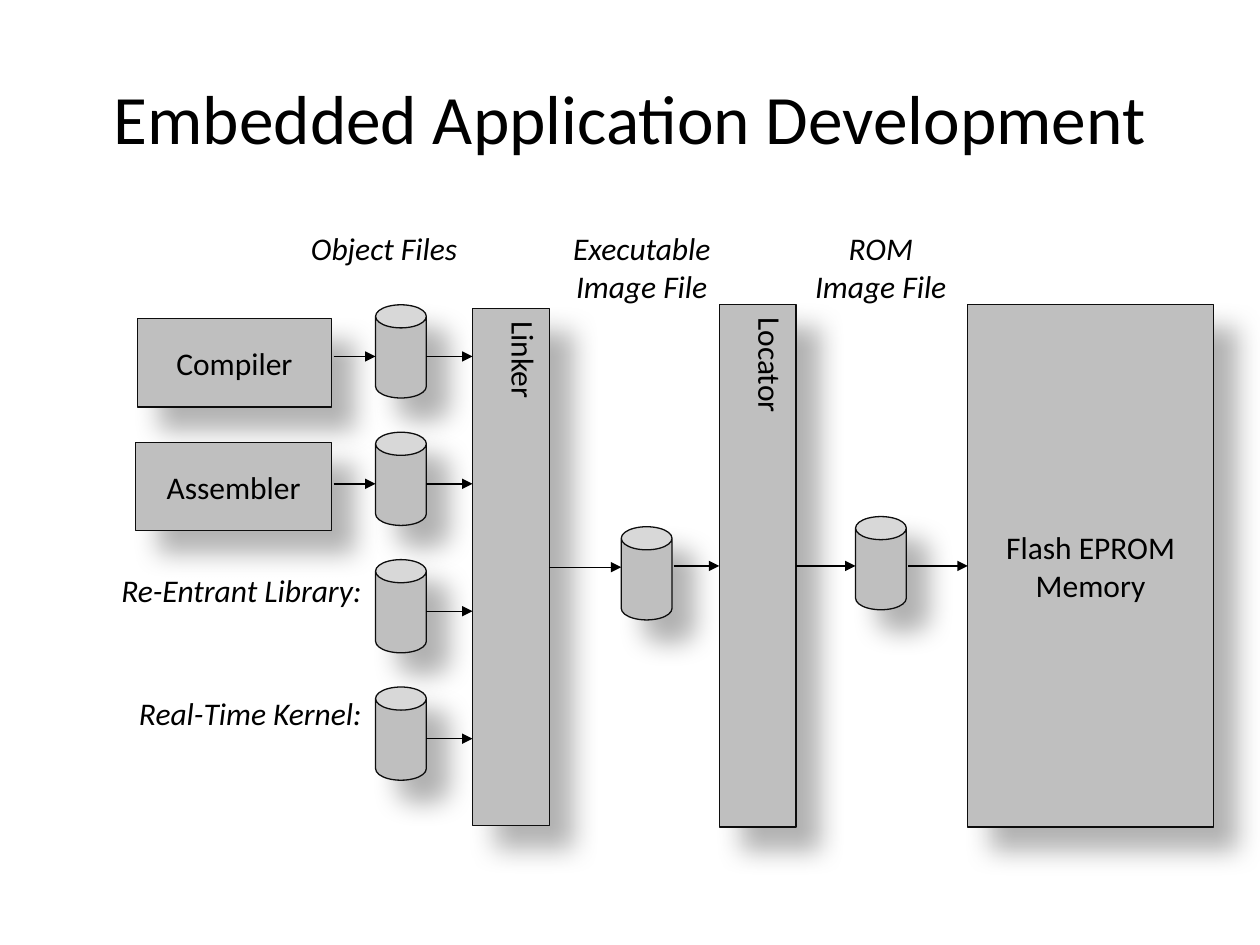
from collections import namedtuple

from lxml import etree
from pptx import Presentation
from pptx.dml.color import RGBColor
from pptx.enum.shapes import MSO_CONNECTOR, MSO_SHAPE
from pptx.enum.text import MSO_ANCHOR, MSO_AUTO_SIZE, PP_ALIGN
from pptx.oxml import parse_xml
from pptx.oxml.ns import nsdecls, qn
from pptx.util import Pt

BLACK = RGBColor(0x00, 0x00, 0x00)
OUTLINE = RGBColor(0x0D, 0x0D, 0x0D)
GREY = RGBColor(0xBF, 0xBF, 0xBF)
FONT = "Calibri"
TEXT_SIZE = 18
TOP_SIDE, LEFT_SIDE, BOTTOM_SIDE, RIGHT_SIDE = range(4)
CAN_WIDTH, CAN_HEIGHT = 29, 53.3

Box = namedtuple("Box", "left top width height")

SHADOW = (
    f'<a:outerShdw {nsdecls("a")} blurRad="{Pt(15)}" dist="{Pt(18)}" '
    'dir="2700000" algn="tl" rotWithShape="0">'
    '<a:srgbClr val="000000"><a:alpha val="30000"/></a:srgbClr></a:outerShdw>'
)


def in_points(box):
    return [Pt(length) for length in box]


def write(frame, text, align, size=TEXT_SIZE, italic=False):
    frame.word_wrap = True
    frame.auto_size = MSO_AUTO_SIZE.NONE
    frame.text = text
    for para in frame.paragraphs:
        para.alignment = align
        para.font.name = FONT
        para.font.size = Pt(size)
        para.font.italic = italic
        para.font.color.rgb = BLACK


def add_grey_shape(page, kind, box):
    shape = page.shapes.add_shape(kind, *in_points(box))
    shape.fill.solid()
    shape.fill.fore_color.rgb = GREY
    shape.line.color.rgb = OUTLINE
    shape.line.width = Pt(0.75)
    shape.shadow.inherit = False
    shape.element.spPr.find(qn("a:effectLst")).append(parse_xml(SHADOW))
    return shape


def add_block(page, text, box):
    block = add_grey_shape(page, MSO_SHAPE.RECTANGLE, box)
    write(block.text_frame, text, PP_ALIGN.CENTER)
    block.text_frame.vertical_anchor = MSO_ANCHOR.MIDDLE
    return block


def add_tall_stage(page, text, box):
    """Add a narrow block whose label reads downwards from its top."""
    stage = add_grey_shape(page, MSO_SHAPE.RECTANGLE, box)
    write(stage.text_frame, text, PP_ALIGN.LEFT)
    stage.text_frame.vertical_anchor = MSO_ANCHOR.TOP
    stage.text_frame._txBody.bodyPr.set("vert", "eaVert")
    return stage


def add_file(page, left, top):
    can = add_grey_shape(page, MSO_SHAPE.CAN, Box(left, top, CAN_WIDTH, CAN_HEIGHT))
    can.adjustments[0] = 0.456


def add_label(page, text, box, align):
    label = page.shapes.add_textbox(*in_points(box))
    write(label.text_frame, text, align, italic=True)


def add_arrow(page, start, end, y, source=None, target=None):
    """Point right along y, joined to the source and target blocks if given."""
    arrow = page.shapes.add_connector(
        MSO_CONNECTOR.STRAIGHT, Pt(start), Pt(y), Pt(end), Pt(y))
    if source is not None:
        arrow.begin_connect(source, RIGHT_SIDE)
    if target is not None:
        arrow.end_connect(target, LEFT_SIDE)
    arrow.line.color.rgb = BLACK
    arrow.line.width = Pt(0.75)
    properties = arrow.element.spPr
    etree.SubElement(properties.find(qn("a:ln")), qn("a:tailEnd"), type="triangle")
    etree.SubElement(properties, qn("a:effectLst"))


def add_title(page, box):
    title = page.shapes.title
    title.left, title.top, title.width, title.height = in_points(box)
    write(title.text_frame, "Embedded Application Development",
          PP_ALIGN.CENTER, size=39.6)
    title.text_frame.vertical_anchor = MSO_ANCHOR.MIDDLE


def add_object_files(page, box):
    """Add the sources and their object files; arrows end at the box's right."""
    right = box.left + box.width
    can_left = right - 55.4
    row_step = 72.8
    add_label(page, "Object Files",
              Box(right - 99.4, box.top - 46.8, 110, 43), PP_ALIGN.LEFT)
    add_block(page, "Compiler", Box(78.5, box.top + 8, 111, 50.4))
    add_block(page, "Assembler", Box(77.5, box.top + 78.7, 112, 50.4))
    for row, text in enumerate(("Re-Entrant Library:", "Real-Time Kernel:")):
        add_label(page, text,
                  Box(box.left, box.top + 148.4 + 70.6 * row, 190, 51),
                  PP_ALIGN.RIGHT)
    for row in range(4):
        top = box.top + row * row_step
        middle = top + 29.5
        add_file(page, can_left, top)
        add_arrow(page, can_left + CAN_WIDTH, right, middle)
        if row < 2:
            add_arrow(page, can_left - 24, can_left, middle)


def add_image_file(page, caption, caption_box, can_left, can_top, source, target):
    """Add a captioned file between two stages, with an arrow on each side."""
    add_label(page, caption, caption_box, PP_ALIGN.CENTER)
    add_file(page, can_left, can_top)
    source_middle, target_middle = (
        (stage.top + stage.height / 2) / Pt(1) for stage in (source, target))
    add_arrow(page, 0, can_left, source_middle, source=source)
    add_arrow(page, can_left + CAN_WIDTH + 1, 0, target_middle, target=target)


def add_pipeline(page, box):
    """Add the linker, the locator and the memory, and the files between."""
    linker = add_tall_stage(
        page, "Linker", Box(box.left, box.top + 2.2, 44, box.height - 3))
    locator = add_tall_stage(
        page, "Locator", Box(box.left + 141, box.top, 44, box.height))
    memory = add_block(
        page, "Flash EPROM Memory",
        Box(box.left + 283, box.top, box.width - 283, box.height))
    caption_top = box.top - 46.8
    add_image_file(page, "Executable Image File",
                   Box(box.left + 36.7, caption_top, 120, 70.6),
                   box.left + 85, box.top + 126.8, linker, locator)
    add_image_file(page, "ROM\vImage File",
                   Box(box.left + 183.6, caption_top, 99.4, 75.6),
                   box.left + 218.9, box.top + 121, locator, memory)


def main():
    deck = Presentation()
    deck.slide_width, deck.slide_height = Pt(720), Pt(540)
    page = deck.slides.add_slide(deck.slide_layouts[5])
    add_title(page, Box(36, 21.6, 648, 90))
    add_object_files(page, Box(23.8, 174.2, 246.2, 272))
    add_pipeline(page, Box(270, 174.2, 423.4, 298.4))
    deck.save("out.pptx")


if __name__ == "__main__":
    main()
